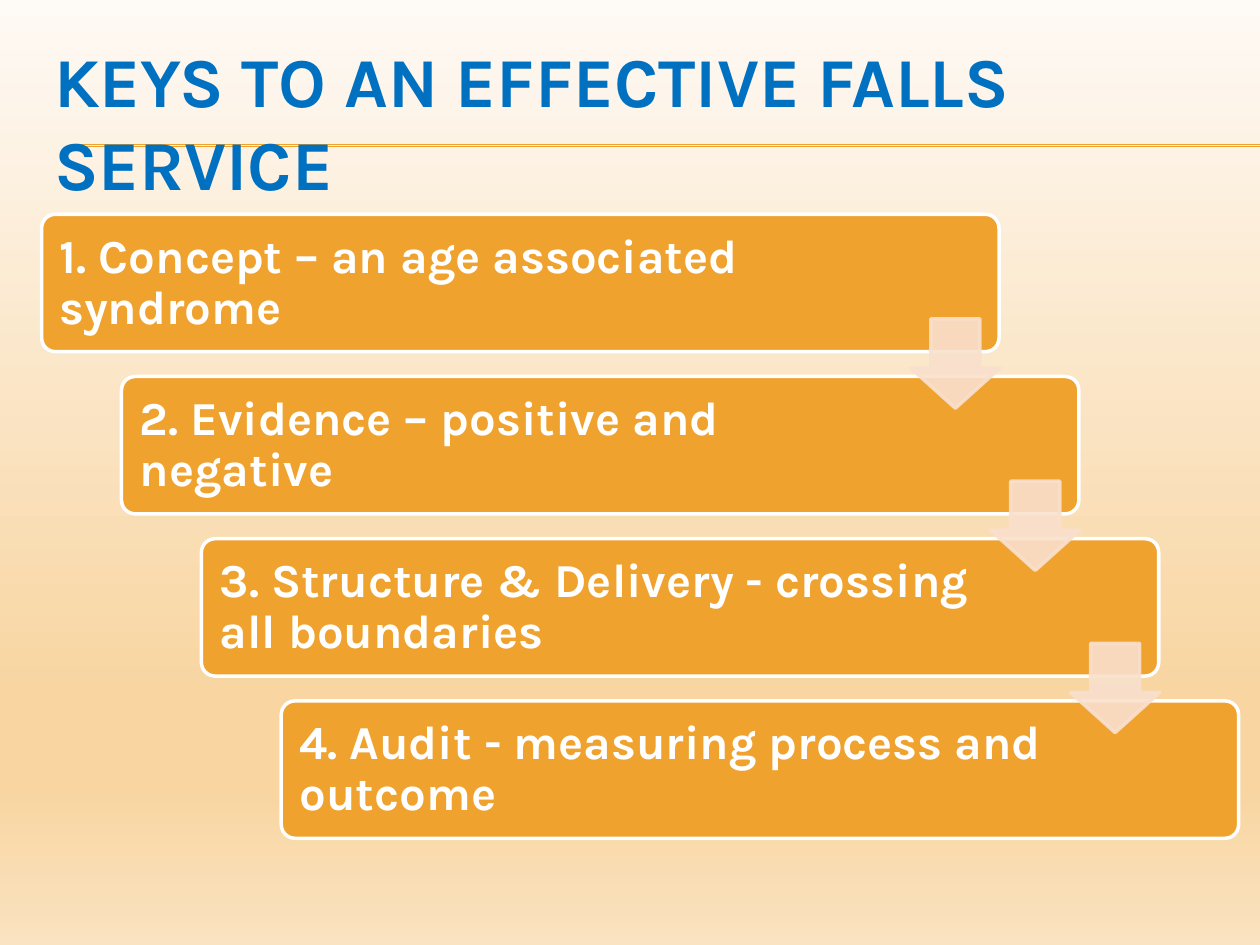
from copy import deepcopy

from lxml.etree import SubElement
from pptx import Presentation
from pptx.dml.color import RGBColor
from pptx.enum.shapes import MSO_CONNECTOR, MSO_SHAPE
from pptx.enum.text import MSO_ANCHOR, PP_ALIGN
from pptx.oxml.ns import qn
from pptx.util import Cm, Pt

ORANGE = RGBColor(0xF0, 0xA2, 0x2E)
PEACH = RGBColor(0xF9, 0xE0, 0xCD)
BLUE = RGBColor(0x00, 0x70, 0xC0)
WHITE = RGBColor(0xFF, 0xFF, 0xFF)
CREAM = RGBColor(0xFE, 0xFA, 0xF5)
SAND = RGBColor(0xF8, 0xD5, 0xA1)
PALE_SAND = RGBColor(0xFA, 0xE3, 0xC0)

BACKDROP = [(0, CREAM), (0.74, SAND), (0.83, SAND), (1, PALE_SAND)]
STEPS = [
    ("1. Concept – an age associated syndrome", 16.08),
    ("2. Evidence – positive and negative", 15.73),
    ("3. Structure & Delivery - crossing all boundaries", 15.73),
    ("4. Audit - measuring process and outcome", 15.73),
]
STEP_X, STEP_Y = 1.61, 3.27


class SlideBuilder:
    """Draws styled elements on one slide, with lengths in centimetres."""

    font = "Karla"

    def __init__(self, slide):
        self.slide = slide

    def background(self, stops):
        fill = self.slide.background.fill
        fill.gradient()
        fill.gradient_angle = 270
        stop_list = self.slide.element.find(".//" + qn("a:gsLst"))
        for _ in range(len(stops) - len(stop_list)):
            stop_list.append(deepcopy(stop_list[0]))
        for stop, (position, color) in zip(fill.gradient_stops, stops):
            stop.position = position
            stop.color.rgb = color

    def rule(self, left, right, y):
        rule = self.slide.shapes.add_connector(
            MSO_CONNECTOR.STRAIGHT, Cm(left), Cm(y), Cm(right), Cm(y))
        rule.line.color.rgb = ORANGE
        rule.line.width = Pt(0.75)
        SubElement(rule.element.spPr, qn("a:effectLst"))

    def text(self, left, top, width, height, wording, size, color,
             inset=(0.25, 0.13), spacing=1.0):
        box = self.slide.shapes.add_textbox(Cm(left), Cm(top), Cm(width), Cm(height))
        frame = box.text_frame
        frame.word_wrap = True
        frame.vertical_anchor = MSO_ANCHOR.MIDDLE
        frame.margin_left = frame.margin_right = Cm(inset[0])
        frame.margin_top = frame.margin_bottom = Cm(inset[1])
        paragraph = frame.paragraphs[0]
        paragraph.alignment = PP_ALIGN.LEFT
        paragraph.line_spacing = spacing
        run = paragraph.add_run()
        run.text = wording
        run.font.name = self.font
        run.font.size = Pt(size)
        run.font.bold = True
        run.font.color.rgb = color

    def shape(self, preset, left, top, width, height, fill, line, adjustments, opacity=None):
        shape = self.slide.shapes.add_shape(preset, Cm(left), Cm(top), Cm(width), Cm(height))
        shape.shadow.inherit = False
        for index, value in enumerate(adjustments):
            shape.adjustments[index] = value
        shape.fill.solid()
        shape.fill.fore_color.rgb = fill
        shape.line.color.rgb = line
        shape.line.width = Pt(2)
        if opacity is not None:
            for color in shape.element.spPr.iter(qn("a:srgbClr")):
                SubElement(color, qn("a:alpha"), val=str(opacity * 1000))

    def step(self, left, top, wording, text_width):
        self.shape(MSO_SHAPE.ROUNDED_RECTANGLE, left, top, 19.3, 2.77, ORANGE, WHITE, [0.1])
        self.text(left + 0.09, top + 0.08, text_width, 2.62, wording, 27, WHITE,
                  inset=(0.28, 0.28), spacing=0.9)

    def arrow(self, left, top):
        self.shape(MSO_SHAPE.DOWN_ARROW, left, top, 1.8, 1.8, PEACH, PEACH,
                   [0.55, 0.45], opacity=90)


def main():
    deck = Presentation()
    deck.slide_width, deck.slide_height = Cm(25.4), Cm(19.05)
    builder = SlideBuilder(deck.slides.add_slide(deck.slide_layouts[6]))
    builder.background(BACKDROP)
    for y in (2.92, 2.95):
        builder.rule(1.42, 25.4, y)
    builder.text(0.84, 1.27, 24.13, 2.34, "KEYS TO AN EFFECTIVE FALLS SERVICE", 40, BLUE)
    for index, (wording, text_width) in enumerate(STEPS):
        builder.step(0.84 + index * STEP_X, 4.32 + index * STEP_Y, wording, text_width)
    for index in range(len(STEPS) - 1):
        builder.arrow(18.36 + index * STEP_X, 6.43 + index * STEP_Y)
    deck.save("out.pptx")


if __name__ == "__main__":
    main()
